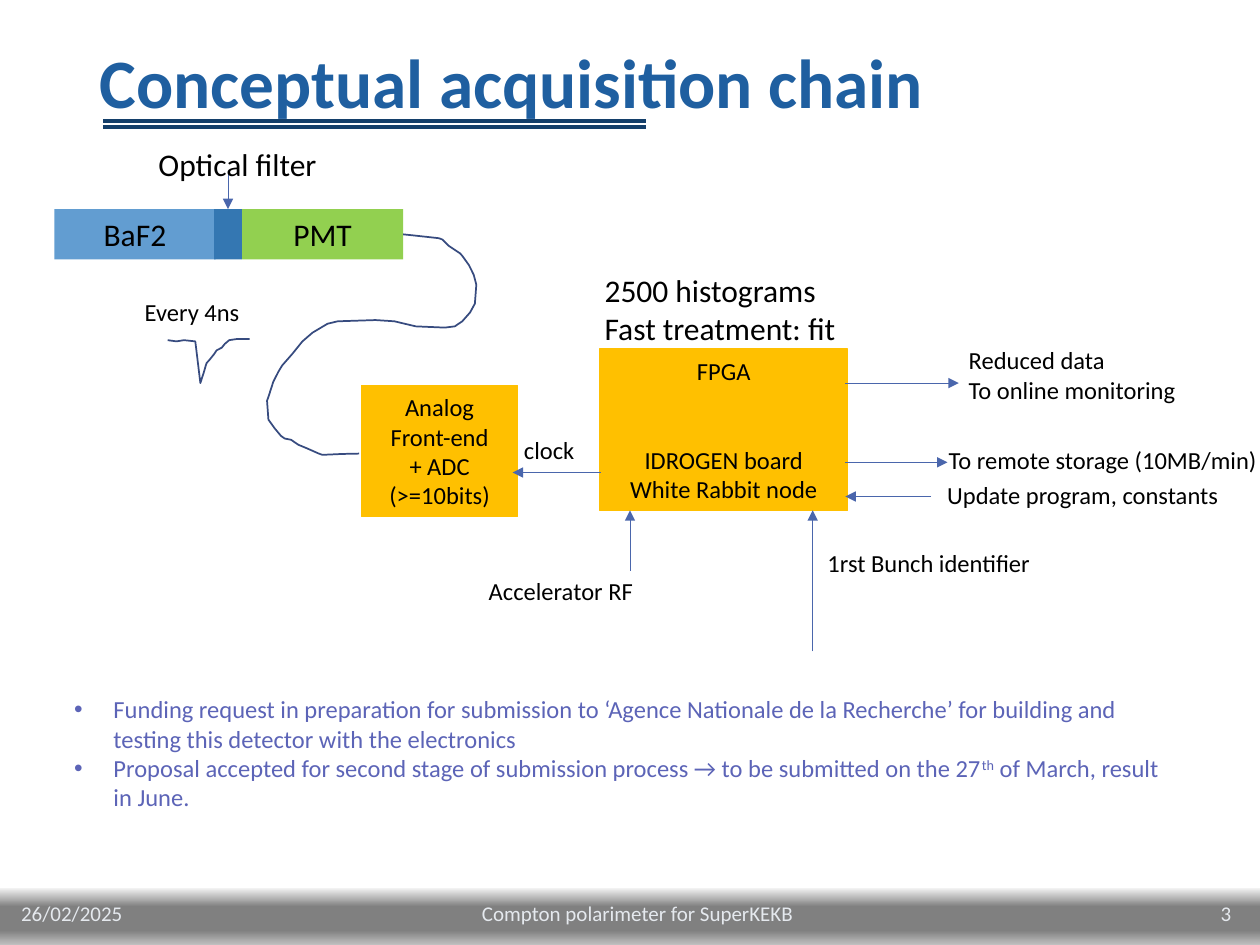
from dataclasses import dataclass

from lxml import etree
from pptx import Presentation
from pptx.dml.color import RGBColor
from pptx.enum.shapes import MSO_CONNECTOR, MSO_SHAPE
from pptx.enum.text import MSO_ANCHOR, PP_ALIGN
from pptx.oxml.ns import qn
from pptx.util import Pt

RECT = MSO_SHAPE.RECTANGLE
STRAIGHT = MSO_CONNECTOR.STRAIGHT
TOP, MIDDLE = MSO_ANCHOR.TOP, MSO_ANCHOR.MIDDLE
LEFT, CENTER, RIGHT = PP_ALIGN.LEFT, PP_ALIGN.CENTER, PP_ALIGN.RIGHT
TOP_SIDE = 0


@dataclass(frozen=True)
class Theme:
    font: str = "Calibri"
    title: str = "1F5FA0"
    rule: str = "143F6A"
    footer: str = "E5E9EE"
    text: str = "000000"
    notes: str = "5C64B7"
    crystal: str = "629DD1"
    optical_filter: str = "3477B2"
    pmt: str = "92D050"
    board: str = "FFC000"
    arrow: str = "4A66AC"
    trace: str = "374B7F"
    bar_stops: tuple = ((0, "F2F2F2"), (27, "808080"), (62, "808080"), (100, "F2F2F2"))
    title_size: float = 39.6
    large: float = 18
    small: float = 14
    footer_size: float = 12


THEME = Theme()


def color(value):
    return RGBColor.from_string(value)


def add_run(paragraph, text, size, ink, bold=False, superscript=False):
    run = paragraph.add_run()
    run.text = text
    run.font.name = THEME.font
    run.font.size = Pt(size)
    run.font.bold = bold
    run.font.color.rgb = color(ink)
    if superscript:
        run.font._element.set("baseline", "30000")


def write(frame, lines, size, ink=THEME.text, align=LEFT, anchor=TOP, wrap=True, bold=False):
    frame.word_wrap = wrap
    frame.vertical_anchor = anchor
    for index, line in enumerate(lines):
        paragraph = frame.add_paragraph() if index else frame.paragraphs[0]
        paragraph.alignment = align
        add_run(paragraph, line, size, ink, bold)


def add_text(slide, bounds, lines, size=THEME.small, **style):
    frame = slide.shapes.add_textbox(*map(Pt, bounds)).text_frame
    write(frame, lines, size, **style)
    return frame


def add_block(slide, bounds, fill, lines=(), size=THEME.small):
    block = slide.shapes.add_shape(RECT, *map(Pt, bounds))
    block.shadow.inherit = False
    block.fill.solid()
    block.fill.fore_color.rgb = color(fill)
    block.line.fill.background()
    write(block.text_frame, lines, size, align=CENTER, anchor=MIDDLE)
    return block


def outline(block, ink):
    block.line.color.rgb = color(ink)
    block.line.width = Pt(0.75)


def add_line(slide, start, end, ink, width, arrow=False):
    line = slide.shapes.add_connector(STRAIGHT, *map(Pt, start + end))
    line.line.color.rgb = color(ink)
    line.line.width = Pt(width)
    if arrow:
        etree.SubElement(line.line._get_or_add_ln(), qn("a:tailEnd"), type="triangle")
    etree.SubElement(line._element.spPr, qn("a:effectLst"))
    return line


def add_arrow(slide, start, end):
    return add_line(slide, start, end, THEME.arrow, 0.5, arrow=True)


def add_trace(slide, points):
    (x, y), *rest = [(Pt(px), Pt(py)) for px, py in points]
    builder = slide.shapes.build_freeform(x, y)
    builder.add_line_segments(rest, close=False)
    trace = builder.convert_to_shape()
    trace.shadow.inherit = False
    trace.fill.background()
    trace.line.color.rgb = color(THEME.trace)
    trace.line.width = Pt(1)


def add_footer_bar(slide):
    bar = add_block(slide, (0, 507.6, 720, 38.9), THEME.footer)
    bar.fill.gradient()
    bar.fill.gradient_angle = 270
    stops = bar._element.spPr.find(qn("a:gradFill")).find(qn("a:gsLst"))
    for stop in list(stops):
        stops.remove(stop)
    for position, shade in THEME.bar_stops:
        stop = etree.SubElement(stops, qn("a:gs"), pos=str(position * 1000))
        etree.SubElement(stop, qn("a:srgbClr"), val=shade)


def add_bullets(slide, bounds, items):
    frame = add_text(slide, bounds, ())
    for index, runs in enumerate(items):
        paragraph = frame.add_paragraph() if index else frame.paragraphs[0]
        properties = paragraph._p.get_or_add_pPr()
        properties.set("marL", str(Pt(22.5)))
        properties.set("indent", str(-Pt(22.5)))
        etree.SubElement(properties, qn("a:buFont"), typeface="Arial")
        etree.SubElement(properties, qn("a:buChar"), char="•")
        for text, superscript in runs:
            add_run(paragraph, text, THEME.small, THEME.notes, superscript=superscript)


SIGNAL_CABLE = [
    (230.4, 133.9), (236.9, 134.6), (250.6, 136.1), (252.7, 136.8), (256.3, 140.4),
    (262.8, 144.7), (264.2, 146.2), (268, 151.5), (270.7, 157), (272.2, 162.7),
    (271.4, 173.5), (268.6, 178.6), (264.2, 183.6), (259.9, 186.5), (254.2, 187.2),
    (237.6, 186.5), (225.4, 183.6), (214.6, 182.9), (193, 183.6), (187.2, 185),
    (178.6, 190.1), (172.8, 195.1), (167, 202.3), (161.3, 208.8), (159.1, 212.4),
    (156.2, 218.2), (153.4, 226.8), (152.6, 229), (153.4, 239.8), (157, 244.8),
    (160.6, 249.1), (162.7, 250.6), (166.3, 251.3), (170.6, 254.2), (175.7, 256.3),
    (182.2, 259.2), (184.3, 259.9), (195.8, 259.4), (205.2, 259.2),
]
PULSE = [
    (95.8, 194.4), (100.8, 195.1), (105.1, 194.4), (111.6, 195.1), (114.5, 218.9),
    (116.6, 212.4), (117.4, 209.5), (118.1, 207.4), (119.5, 205.9), (122.4, 202.3),
    (123.8, 200.2), (126.7, 198.7), (128.5, 196.5), (131, 194.4), (135, 193.8), (142.6, 193.7),
]
LABELS = [
    ((83.5, 79.2, 110.2, 28.8), ["Optical filter"], THEME.large),
    ((75.6, 166.3, 69.1, 24.5), ["Every 4ns"], THEME.small),
    ((338.4, 151.2, 147.6, 51.1), ["2500 histograms", "Fast treatment: fit"], THEME.large),
    ((272.2, 325.4, 97.9, 24.5), ["Accelerator RF"], THEME.small),
    ((465.8, 309.6, 131.8, 24.5), ["1rst Bunch identifier"], THEME.small),
    ((535, 250.6, 192.2, 24.5), ["To remote storage (10MB/min)"], THEME.small),
    ((546.5, 193.7, 133.9, 41), ["Reduced data", "To online monitoring"], THEME.small),
    ((292.3, 244.8, 43.9, 24.5), ["clock"], THEME.small),
    ((534.2, 270.7, 170.6, 24.5), ["Update program, constants"], THEME.small),
]
SIGNALS = [
    ((360, 326.2), (360, 291.6)),      # accelerator RF
    ((464.4, 372.2), (464.4, 291.6)),  # bunch identifier
    ((483.1, 218.9), (547.9, 218.9)),  # online monitoring
    ((483.1, 264.2), (541.4, 264.2)),  # remote storage
    ((343.4, 270), (293, 270)),        # clock
    ((532.1, 283.7), (483.1, 283.7)),  # program update
]
FOOTERS = [
    (5, 89.3, "26/02/2025", LEFT),
    (138.2, 452.2, "Compton polarimeter for SuperKEKB", CENTER),
    (630.7, 79.9, "3", RIGHT),
]
NOTES = [
    [("Funding request in preparation for submission to ‘Agence Nationale de la Recherche’ "
      "for building and testing this detector with the electronics", False)],
    [("Proposal accepted for second stage of submission process → to be submitted on the 27", False),
     ("th", True), (" of March, result in June.", False)],
]


def main():
    deck = Presentation()
    deck.slide_width, deck.slide_height = Pt(720), Pt(540)
    slide = deck.slides.add_slide(deck.slide_layouts[6])

    # Title, double rule and footer
    add_footer_bar(slide)
    for y in (69.1, 72.7):
        add_line(slide, (59, y), (369.4, y), THEME.rule, 2)
    title = add_text(slide, (49.7, 28.8, 620.6, 40.3), ["Conceptual acquisition chain"],
                     THEME.title_size, ink=THEME.title, anchor=MIDDLE, bold=True)
    title.paragraphs[0].line_spacing = 0.9
    for x, width, text, align in FOOTERS:
        add_text(slide, (x, 507.6, width, 28.8), [text], THEME.footer_size,
                 ink=THEME.footer, align=align, anchor=MIDDLE)

    # Detector
    add_block(slide, (31, 119.5, 92.2, 28.8), THEME.crystal, ["BaF2"], THEME.large)
    add_block(slide, (138.2, 119.5, 92.2, 28.8), THEME.pmt, ["PMT"], THEME.large)
    optical_filter = add_block(slide, (122.4, 119.5, 15.8, 28.8), THEME.optical_filter)
    filter_pointer = add_arrow(slide, (130.3, 97.9), (130.3, 119.5))
    filter_pointer.end_connect(optical_filter, TOP_SIDE)

    # Electronics
    fpga = add_block(slide, (342.7, 199.4, 141.8, 92.2), THEME.board,
                     ["FPGA", "IDROGEN board", "White Rabbit node"])
    fpga.text_frame.paragraphs[1].space_before = Pt(34)
    front_end = add_block(slide, (206.6, 220.3, 89.3, 74.9), THEME.board,
                          ["Analog Front-end", "+ ADC (>=10bits)"])
    for board in (fpga, front_end):
        outline(board, THEME.board)

    # Signals and their labels
    for points in (SIGNAL_CABLE, PULSE):
        add_trace(slide, points)
    for start, end in SIGNALS:
        add_arrow(slide, start, end)
    for bounds, lines, size in LABELS:
        add_text(slide, bounds, lines, size, wrap=False)

    # Funding notes
    add_bullets(slide, (35.3, 393.1, 645.1, 74.9), NOTES)

    deck.save("out.pptx")


if __name__ == "__main__":
    main()
